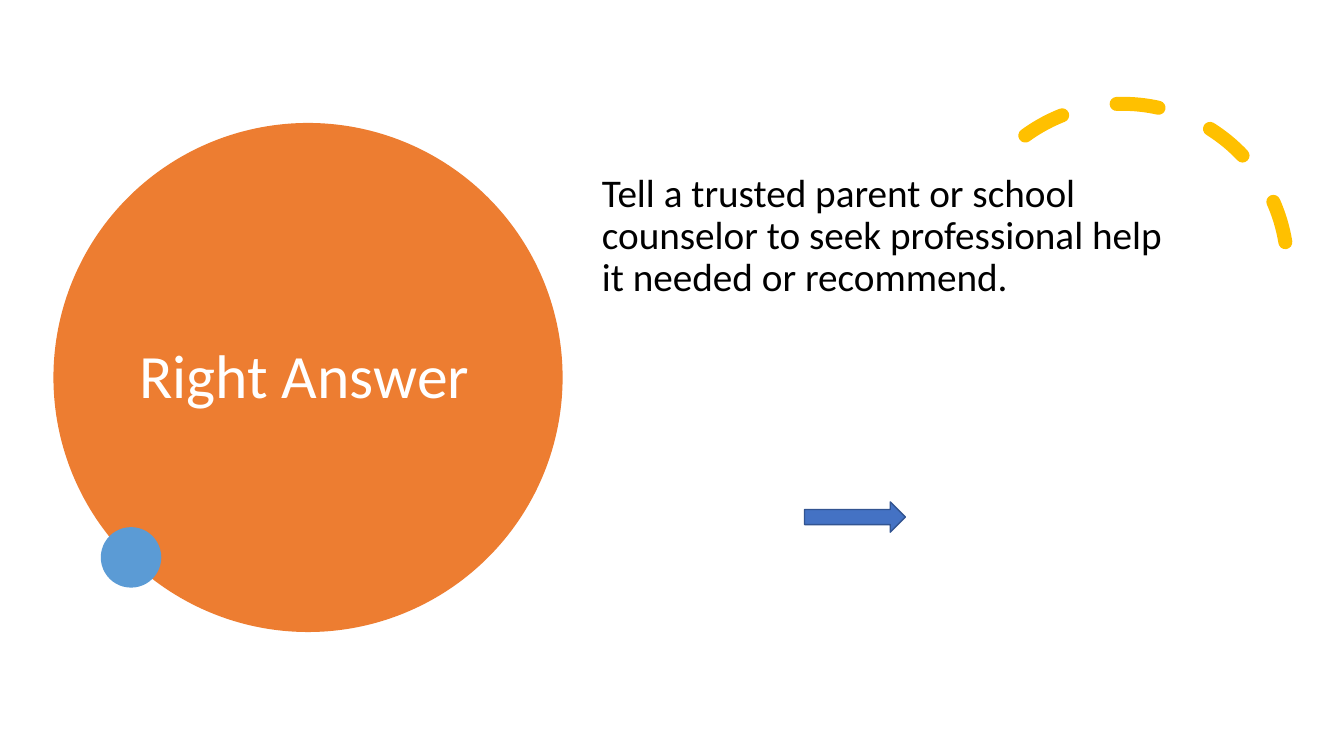
from lxml import etree
from pptx import Presentation
from pptx.dml.color import RGBColor
from pptx.enum import dml, shapes, text
from pptx.oxml import ns
from pptx.util import Inches, Pt

# Content
TITLE = "Right Answer"
ANSWER = ("Tell a trusted parent or school counselor to seek professional help "
          "it needed or recommend.")

FONT = "Calibri"
ORANGE = RGBColor(0xED, 0x7D, 0x31)
GOLD = RGBColor(0xFF, 0xC0, 0x00)
SKY = RGBColor(0x5B, 0x9B, 0xD5)
BLUE = RGBColor(0x44, 0x72, 0xC4)
NAVY = RGBColor(0x32, 0x54, 0x91)
WHITE = RGBColor(0xFF, 0xFF, 0xFF)
BLACK = RGBColor(0x00, 0x00, 0x00)

# Left, top, width, height in inches
BOXES = {
    "disc": (0.53, 1.22, 5.05, 5.05),
    "title": (1.28, 1.53, 3.54, 4.45),
    "arc": (9.5, 1.03, 3.27, 3.27),
    "dot": (1, 5.23, 0.6, 0.6),
    "answer": (5.87, 1.67, 6.05, 4.3),
    "arrow": (7.98, 4.98, 1, 0.3),
}


def box(name):
    return [Inches(length) for length in BOXES[name]]


def write(placeholder, name, words, size, color, anchor, before=0):
    placeholder.left, placeholder.top, placeholder.width, placeholder.height = box(name)
    frame = placeholder.text_frame
    frame.text = words
    frame.word_wrap = True
    frame.auto_size = text.MSO_AUTO_SIZE.NONE
    frame.vertical_anchor = anchor
    paragraph = frame.paragraphs[0]
    paragraph.alignment = text.PP_ALIGN.LEFT
    paragraph.line_spacing = 0.9
    paragraph.space_before = Pt(before)
    font = paragraph.runs[0].font
    font.name, font.size, font.color.rgb = FONT, Pt(size), color
    # No bullet and no hanging indent
    properties = paragraph._p.get_or_add_pPr()
    properties.set("marL", "0")
    properties.set("indent", "0")
    etree.SubElement(properties, ns.qn("a:buNone"))


def draw(slide, name, kind, fill=None, line=None, width=1):
    shape = slide.shapes.add_shape(kind, *box(name))
    shape.shadow.inherit = False
    if fill is None:
        shape.fill.background()
    else:
        shape.fill.solid()
        shape.fill.fore_color.rgb = fill
    if line is None:
        shape.line.fill.background()
    else:
        shape.line.color.rgb = line
        shape.line.width = Pt(width)
    return shape


def main():
    presentation = Presentation()
    presentation.slide_width, presentation.slide_height = Inches(13.33), Inches(7.5)
    slide = presentation.slides.add_slide(presentation.slide_layouts[1])
    kinds = shapes.MSO_SHAPE

    # Title on the orange disc, which goes behind it
    title, answer = slide.placeholders
    write(title, "title", TITLE, 44, WHITE, text.MSO_ANCHOR.MIDDLE)
    disc = draw(slide, "disc", kinds.OVAL, ORANGE)
    title._element.addprevious(disc._element)

    # Dashed arc with round ends
    arc = draw(slide, "arc", kinds.ARC, line=GOLD, width=10)
    arc.rotation = 330.2
    arc.adjustments[0], arc.adjustments[1] = 158.17, 17.81
    arc.line.dash_style = dml.MSO_LINE.DASH
    arc.line._get_or_add_ln().set("cap", "rnd")

    # Dot, answer and arrow
    draw(slide, "dot", kinds.OVAL, SKY)
    write(answer, "answer", ANSWER, 28, BLACK, text.MSO_ANCHOR.TOP, before=10)
    draw(slide, "arrow", kinds.RIGHT_ARROW, BLUE, NAVY)

    presentation.save("out.pptx")


if __name__ == "__main__":
    main()
